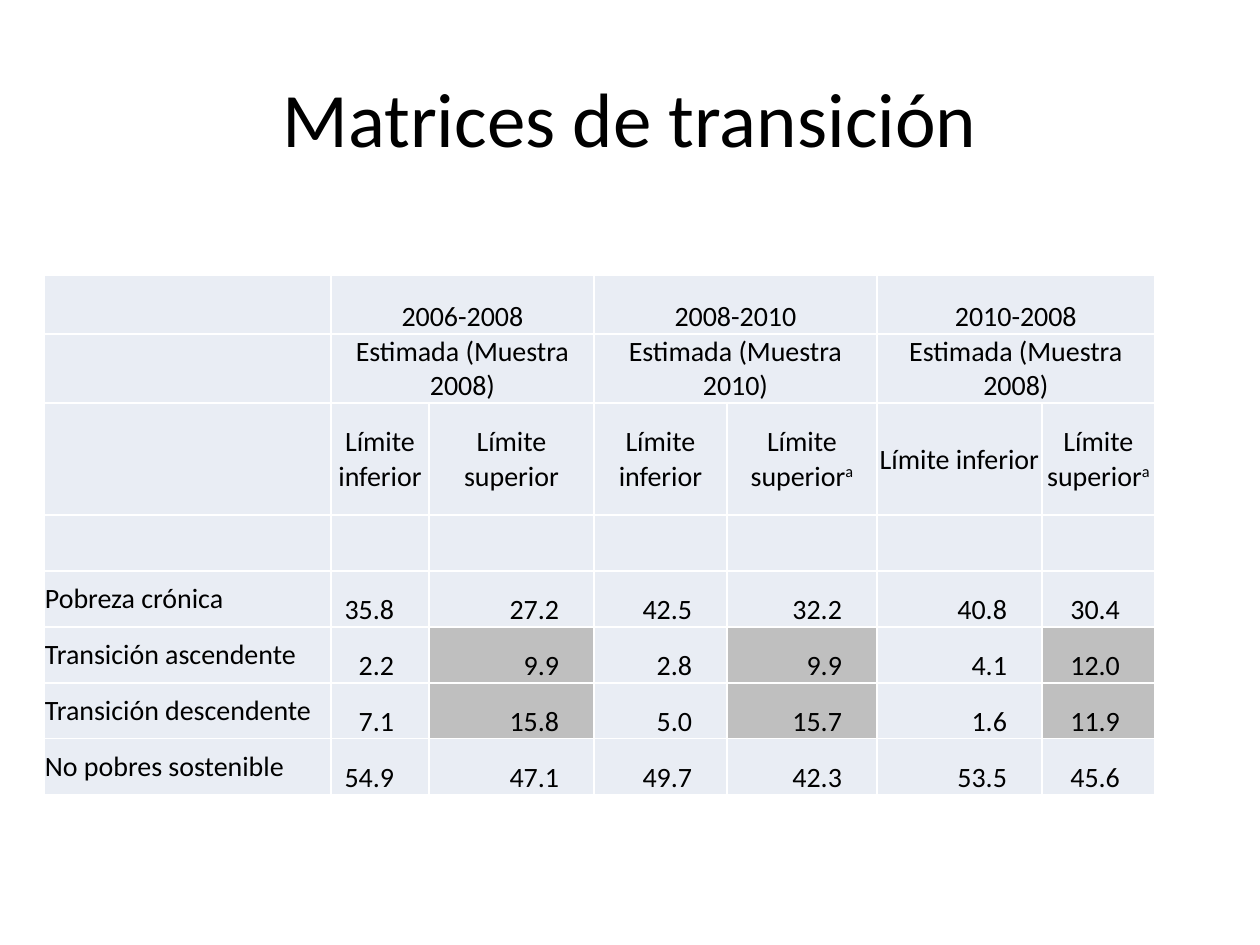
"""Build a slide with a table of poverty transition matrices."""
import lxml.etree
import pptx
import pptx.dml.color
import pptx.enum.text
import pptx.oxml.ns
import pptx.util

RGB = pptx.dml.color.RGBColor
BLACK = RGB(0x00, 0x00, 0x00)
WHITE = RGB(0xFF, 0xFF, 0xFF)
PALE = RGB(0xE9, 0xED, 0xF4)
GRAY = RGB(0xBF, 0xBF, 0xBF)
ALIGN = pptx.enum.text.PP_ALIGN
ANCHOR = pptx.enum.text.MSO_ANCHOR
SCALE = 914400 // 126

COLS = [287, 98, 165, 133, 150, 165, 113]
ROWS = [59, 69, 112, 56, 56, 56, 56, 56]
LOW, HIGH, NOTED = "Límite inferior", "Límite superior", "Límite superior^a"
HEADS = [
    ["", "2006-2008", "", "2008-2010", "", "2010-2008", ""],
    ["", "Estimada (Muestra 2008)", "", "Estimada (Muestra 2010)", "",
     "Estimada (Muestra 2008)", ""],
    ["", LOW, HIGH, LOW, NOTED, LOW, NOTED],
    [""] * 7,
]
BODY = [
    ["Pobreza crónica", "35.8", "27.2", "42.5", "32.2", "40.8", "30.4"],
    ["Transición ascendente", "2.2", "9.9", "2.8", "9.9", "4.1", "12.0"],
    ["Transición descendente", "7.1", "15.8", "5.0", "15.7", "1.6", "11.9"],
    ["No pobres sostenible", "54.9", "47.1", "49.7", "42.3", "53.5", "45.6"],
]


def px(count):
    """Turn pixels into EMU."""
    return pptx.util.Emu(count * SCALE)


def write(frame, text, size=16, font="Calibri", color=BLACK, align=ALIGN.LEFT):
    """Write text in a frame, raising what follows a caret."""
    line = frame.paragraphs[0]
    line.alignment = align
    for index, part in enumerate(text.split("^")):
        run = line.add_run()
        run.text = part
        run.font.size = pptx.util.Pt(size)
        run.font.name = font
        run.font.color.rgb = color
        if index:
            run.font._element.set("baseline", "30000")


def edge(cell, color=WHITE, width=1):
    """Draw the four borders of a cell."""
    props = cell._tc.get_or_add_tcPr()
    tag = pptx.oxml.ns.qn
    for side in ("a:lnL", "a:lnR", "a:lnT", "a:lnB"):
        line = lxml.etree.SubElement(props, tag(side), w=str(pptx.util.Pt(width)))
        fill = lxml.etree.SubElement(line, tag("a:solidFill"))
        lxml.etree.SubElement(fill, tag("a:srgbClr"), val=str(color))


class Page:
    """Hold the style and the current slide."""

    def __init__(self, deck):
        """Add a blank slide to the deck."""
        self.slide = deck.slides.add_slide(deck.slide_layouts[6])

    def title(self, text, left, top, width, height):
        """Add the centred title."""
        box = self.slide.shapes.add_textbox(px(left), px(top), px(width), px(height))
        frame = box.text_frame
        frame.word_wrap = True
        frame.vertical_anchor = ANCHOR.MIDDLE
        write(frame, text, size=44, align=ALIGN.CENTER)

    def cell(self, cell, text, fill, align, anchor, right=1):
        """Style one cell and write its text."""
        edge(cell)
        cell.fill.solid()
        cell.fill.fore_color.rgb = fill
        if text:
            cell.vertical_anchor = anchor
            cell.margin_left = cell.margin_top = px(1)
            cell.margin_right, cell.margin_bottom = px(right), 0
            write(cell.text_frame, text, align=align)

    def table(self, left, top):
        """Add the table with its merged heads and its values."""
        shape = self.slide.shapes.add_table(
            len(ROWS), len(COLS), px(left), px(top), px(sum(COLS)), px(sum(ROWS)))
        table = shape.table
        table.first_row = table.horz_banding = False
        for col, width in zip(table.columns, COLS):
            col.width = px(width)
        for row, height in zip(table.rows, ROWS):
            row.height = px(height)
        for r in range(2):
            for c in (1, 3, 5):
                table.cell(r, c).merge(table.cell(r, c + 1))
        for r, texts in enumerate(HEADS):
            anchor = ANCHOR.BOTTOM if r < 2 else ANCHOR.MIDDLE
            for c, text in enumerate(texts):
                self.cell(table.cell(r, c), text, PALE, ALIGN.CENTER, anchor)
        for r, (label, *values) in enumerate(BODY, len(HEADS)):
            self.cell(table.cell(r, 0), label, PALE, ALIGN.LEFT, ANCHOR.MIDDLE)
            for c, text in enumerate(values, 1):
                fill = GRAY if r in (5, 6) and c % 2 == 0 else PALE
                self.cell(table.cell(r, c), text, fill, ALIGN.RIGHT,
                          ANCHOR.BOTTOM, right=35)


def main():
    """Build and save the deck."""
    deck = pptx.Presentation()
    deck.slide_width, deck.slide_height = px(1260), px(945)
    page = Page(deck)
    page.title("Matrices de transición", 63, 38, 1134, 158)
    page.table(44, 275)
    deck.save("out.pptx")


if __name__ == "__main__":
    main()
